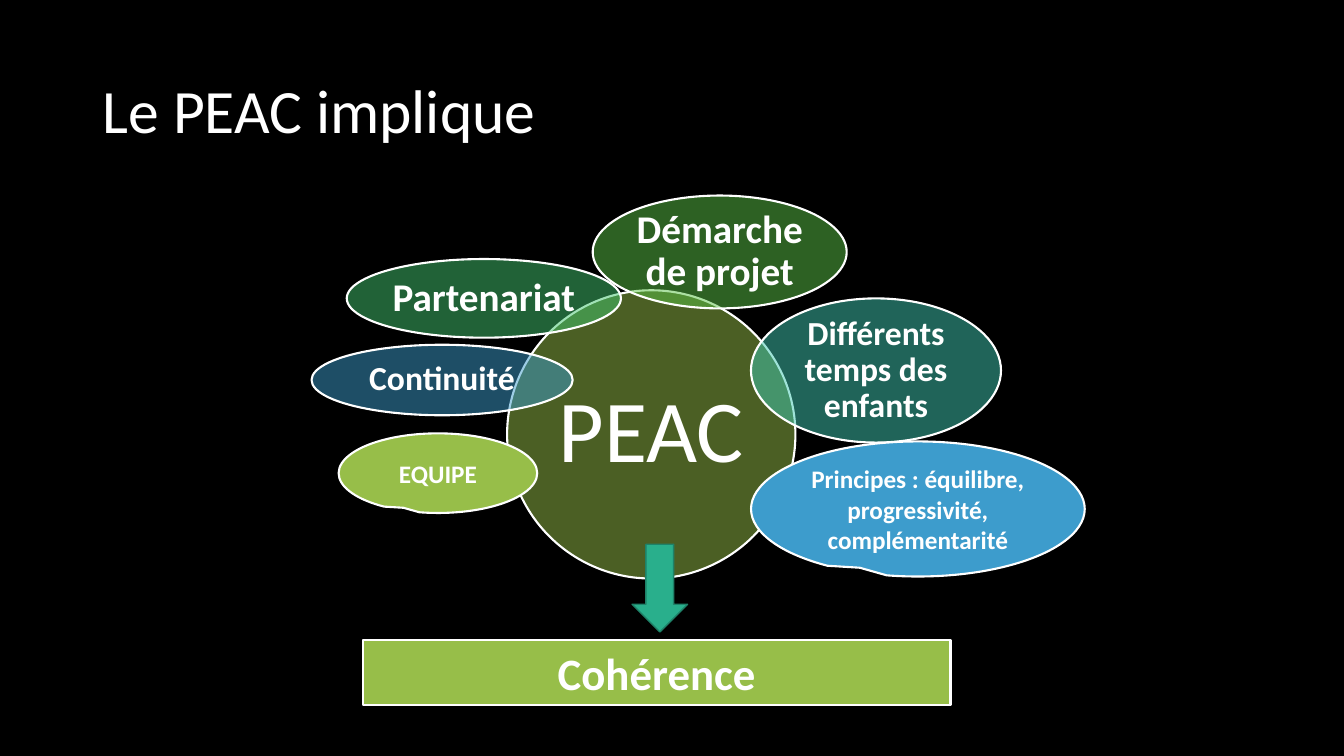
from lxml.etree import SubElement
from pptx import Presentation
from pptx.dml.color import RGBColor
from pptx.enum.shapes import MSO_SHAPE as Shape
from pptx.enum.text import MSO_ANCHOR as Anchor, PP_ALIGN as Align
from pptx.oxml.ns import qn
from pptx.util import Inches, Pt

WHITE, GREEN, BLUE = "FFFFFF", "97BE49", "3D9CCC"


def colour(code):
    return RGBColor.from_string(code)


class Diagram:
    """Style and current slide; every area is given in percent of the slide."""

    font = "Calibri"

    def __init__(self, deck):
        self.width, self.height = deck.slide_width, deck.slide_height
        self.page = deck.slides.add_slide(deck.slide_layouts[6])
        background = self.page.background.fill
        background.solid()
        background.fore_color.rgb = colour("000000")

    def area(self, left, top, width, height):
        return (round(left * self.width / 100), round(top * self.height / 100),
                round(width * self.width / 100), round(height * self.height / 100))

    def label(self, box, text, size, bold=False, align=Align.CENTER,
              spacing=None, inset=None):
        frame = box.text_frame
        frame.word_wrap = True
        frame.vertical_anchor = Anchor.MIDDLE
        if inset is not None:
            frame.margin_left = frame.margin_right = Inches(inset)
            frame.margin_top = frame.margin_bottom = Inches(inset)
        para = frame.paragraphs[0]
        para.text = text
        para.alignment = align
        para.line_spacing = spacing
        para.font.name, para.font.size, para.font.bold = self.font, Pt(size), bold
        para.font.color.rgb = colour(WHITE)

    def title(self, area, text):
        box = self.page.shapes.add_textbox(*self.area(*area))
        self.label(box, text, 44, align=Align.LEFT, spacing=0.9)

    def shape(self, kind, area, fill, line=WHITE, weight=1.5):
        box = self.page.shapes.add_shape(kind, *self.area(*area))
        box.shadow.inherit = False
        box.fill.solid()
        box.fill.fore_color.rgb = colour(fill)
        box.line.color.rgb = colour(line)
        box.line.width = Pt(weight)
        return box

    def bubble(self, area, fill, text, size, inset, bold=True):
        """Half-transparent ellipse with its label."""
        box = self.shape(Shape.OVAL, area, fill)
        tint = box.element.spPr.find(qn("a:solidFill"))[0]
        SubElement(tint, qn("a:alpha"), val="50000")
        self.label(box, text, size, bold, spacing=0.9, inset=inset)

    def callout(self, area, fill, text):
        box = self.shape(Shape.OVAL_CALLOUT, area, fill)
        box.adjustments[0], box.adjustments[1] = -0.174, 0.435
        self.label(box, text, 18, bold=True)

    def banner(self, area, fill, text):
        box = self.shape(Shape.RECTANGLE, area, fill)
        self.label(box, text, 32, bold=True)


def main():
    deck = Presentation()
    deck.slide_width, deck.slide_height = Inches(13.33), Inches(7.5)
    diagram = Diagram(deck)
    diagram.title((6.9, 5.33, 86.25, 19.33), "Le PEAC implique")

    # Core and the ideas around it
    diagram.bubble((37.73, 38.4, 21.45, 38.13), GREEN, "PEAC", 63, 0.09, bold=False)
    ideas = [
        ((44.1, 25.87, 18.9, 14.93), "5AC246", "Démarche de projet", 28, 0.04),
        ((25.8, 34.27, 20.4, 10.4), "43C56E", "Partenariat", 28, 0.04),
        ((55.88, 39.47, 18.6, 19.07), "40C9B2", "Différents temps des enfants", 24, 0.03),
        ((23.18, 45.6, 19.43, 9.33), BLUE, "Continuité", 24, 0.03),
    ]
    for idea in ideas:
        diagram.bubble(*idea)

    # Outcome
    diagram.shape(Shape.DOWN_ARROW, (47.03, 72, 4.13, 11.6), "29AF8C", "1E8168", 1)
    diagram.banner((27, 84.67, 43.73, 8.53), GREEN, "Cohérence")

    # Callouts
    diagram.callout((25.2, 57.33, 14.78, 10.53), GREEN, "EQUIPE")
    diagram.callout((55.88, 58.4, 24.83, 17.87), BLUE,
                    "Principes : équilibre, progressivité, complémentarité")
    deck.save("out.pptx")


if __name__ == "__main__":
    main()
